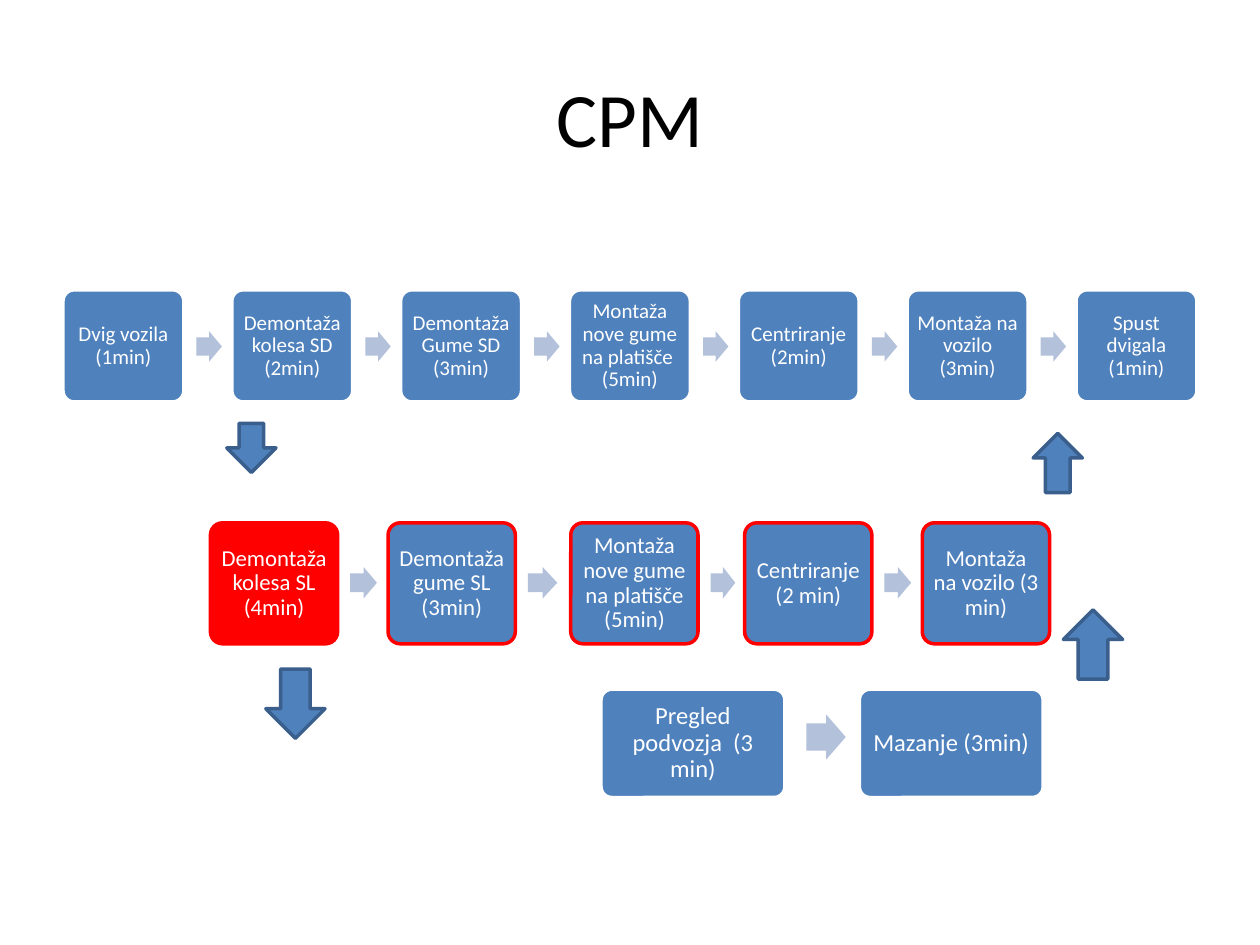
from dataclasses import dataclass

from pptx import Presentation
from pptx.dml.color import RGBColor
from pptx.enum.shapes import MSO_SHAPE
from pptx.enum.text import MSO_ANCHOR, PP_ALIGN
from pptx.util import Inches, Pt

ROUNDED = MSO_SHAPE.ROUNDED_RECTANGLE
RIGHT, UP, DOWN = MSO_SHAPE.RIGHT_ARROW, MSO_SHAPE.UP_ARROW, MSO_SHAPE.DOWN_ARROW
MIDDLE, CENTER = MSO_ANCHOR.MIDDLE, PP_ALIGN.CENTER

BLACK = RGBColor(0x00, 0x00, 0x00)
WHITE = RGBColor(0xFF, 0xFF, 0xFF)
BLUE = RGBColor(0x4F, 0x81, 0xBD)
DARK_BLUE = RGBColor(0x3A, 0x5F, 0x8C)
PALE_BLUE = RGBColor(0xB3, 0xC1, 0xDB)
RED = RGBColor(0xFF, 0x00, 0x00)

FONT = "Calibri"
ARROW_SHARE = 0.53  # arrow length as a share of the gap between two steps


@dataclass(frozen=True)
class Step:
    left: float
    label: str
    fill: RGBColor = BLUE


@dataclass(frozen=True)
class Process:
    """A row of steps joined by arrows; lengths in inches, font size in points."""
    steps: list[Step]
    top: float
    width: float
    height: float
    border: RGBColor
    font_size: int
    inset: float
    arrow_offset: float
    arrow_top: float
    arrow_height: float


@dataclass(frozen=True)
class Branch:
    """A vertical arrow between two processes."""
    kind: MSO_SHAPE
    left: float
    top: float
    width: float
    height: float


MAIN_LABELS = [
    "Dvig vozila (1min)",
    "Demontaža kolesa SD (2min)",
    "Demontaža Gume SD (3min)",
    "Montaža nove gume na platišče  (5min)",
    "Centriranje (2min)",
    "Montaža na vozilo (3min)",
    "Spust dvigala (1min)",
]

PROCESSES = [
    # Right side of the vehicle
    Process([Step(0.5 + 1.34 * i, label) for i, label in enumerate(MAIN_LABELS)],
            top=2.3, width=0.96, height=0.89, border=WHITE, font_size=12, inset=0.05,
            arrow_offset=0.1, arrow_top=2.63, arrow_height=0.24),
    # Left side of the vehicle: the critical path
    Process([Step(1.67, "Demontaža kolesa SL (4min)", RED),
             Step(3.08, "Demontaža gume SL (3min)"),
             Step(4.53, "Montaža nove gume na platišče (5min)"),
             Step(5.91, "Centriranje (2 min)"),
             Step(7.32, "Montaža na vozilo (3 min)")],
            top=4.15, width=1.01, height=0.96, border=RED, font_size=13, inset=0.05,
            arrow_offset=0.1, arrow_top=4.5, arrow_height=0.25),
    # Chassis
    Process([Step(4.77, "Pregled podvozja  (3 min)"),
             Step(6.82, "Mazanje (3min)")],
            top=5.47, width=1.46, height=0.86, border=WHITE, font_size=14, inset=0.06,
            arrow_offset=0.17, arrow_top=5.67, arrow_height=0.36),
]

BRANCHES = [
    Branch(DOWN, 1.8, 3.36, 0.39, 0.39),
    Branch(UP, 8.2, 3.44, 0.39, 0.47),
    Branch(UP, 8.44, 4.84, 0.47, 0.55),
    Branch(DOWN, 2.11, 5.31, 0.47, 0.55),
]


def write_text(shape, text: str, size: int, color: RGBColor,
               inset: float | None = None, spacing: float = 1.0) -> None:
    frame = shape.text_frame
    frame_format = {"word_wrap": True, "vertical_anchor": MIDDLE}
    if inset is not None:
        for side in ("left", "right", "top", "bottom"):
            frame_format[f"margin_{side}"] = Inches(inset)
    for name, value in frame_format.items():
        setattr(frame, name, value)

    paragraph = frame.paragraphs[0]
    paragraph.alignment = CENTER
    paragraph.line_spacing = spacing
    run = paragraph.add_run()
    run.text = text
    for name, value in {"name": FONT, "size": Pt(size)}.items():
        setattr(run.font, name, value)
    run.font.color.rgb = color


def add_figure(slide, kind: MSO_SHAPE, left: float, top: float, width: float,
               height: float, fill: RGBColor, border: RGBColor | None = None,
               adjustments: tuple[float, ...] = ()):
    figure = slide.shapes.add_shape(kind, Inches(left), Inches(top),
                                    Inches(width), Inches(height))
    figure.shadow.inherit = False
    figure.fill.solid()
    figure.fill.fore_color.rgb = fill
    if border is None:
        figure.line.fill.background()
    else:
        figure.line.color.rgb = border
        figure.line.width = Pt(2)
    for i, value in enumerate(adjustments):
        figure.adjustments[i] = value
    return figure


def add_process(slide, process: Process) -> None:
    for step in process.steps:
        box = add_figure(slide, ROUNDED, step.left, process.top, process.width,
                         process.height, step.fill, process.border, (0.1,))
        write_text(box, step.label, process.font_size, WHITE, process.inset, 0.9)

    for step, following in zip(process.steps, process.steps[1:]):
        right_edge = step.left + process.width
        gap = following.left - right_edge
        add_figure(slide, RIGHT, right_edge + process.arrow_offset, process.arrow_top,
                   ARROW_SHARE * gap, process.arrow_height, PALE_BLUE,
                   adjustments=(0.6, 0.5))


def main() -> None:
    deck = Presentation()
    deck.slide_width, deck.slide_height = Inches(10), Inches(7.5)
    slide = deck.slides.add_slide(deck.slide_layouts[6])

    # Title
    title = slide.shapes.add_textbox(Inches(0.5), Inches(0.3), Inches(9), Inches(1.25))
    write_text(title, "CPM", 44, BLACK)

    # Processes and the arrows between them
    for process in PROCESSES:
        add_process(slide, process)
    for branch in BRANCHES:
        add_figure(slide, branch.kind, branch.left, branch.top, branch.width,
                   branch.height, BLUE, DARK_BLUE)

    deck.save("out.pptx")


if __name__ == "__main__":
    main()
